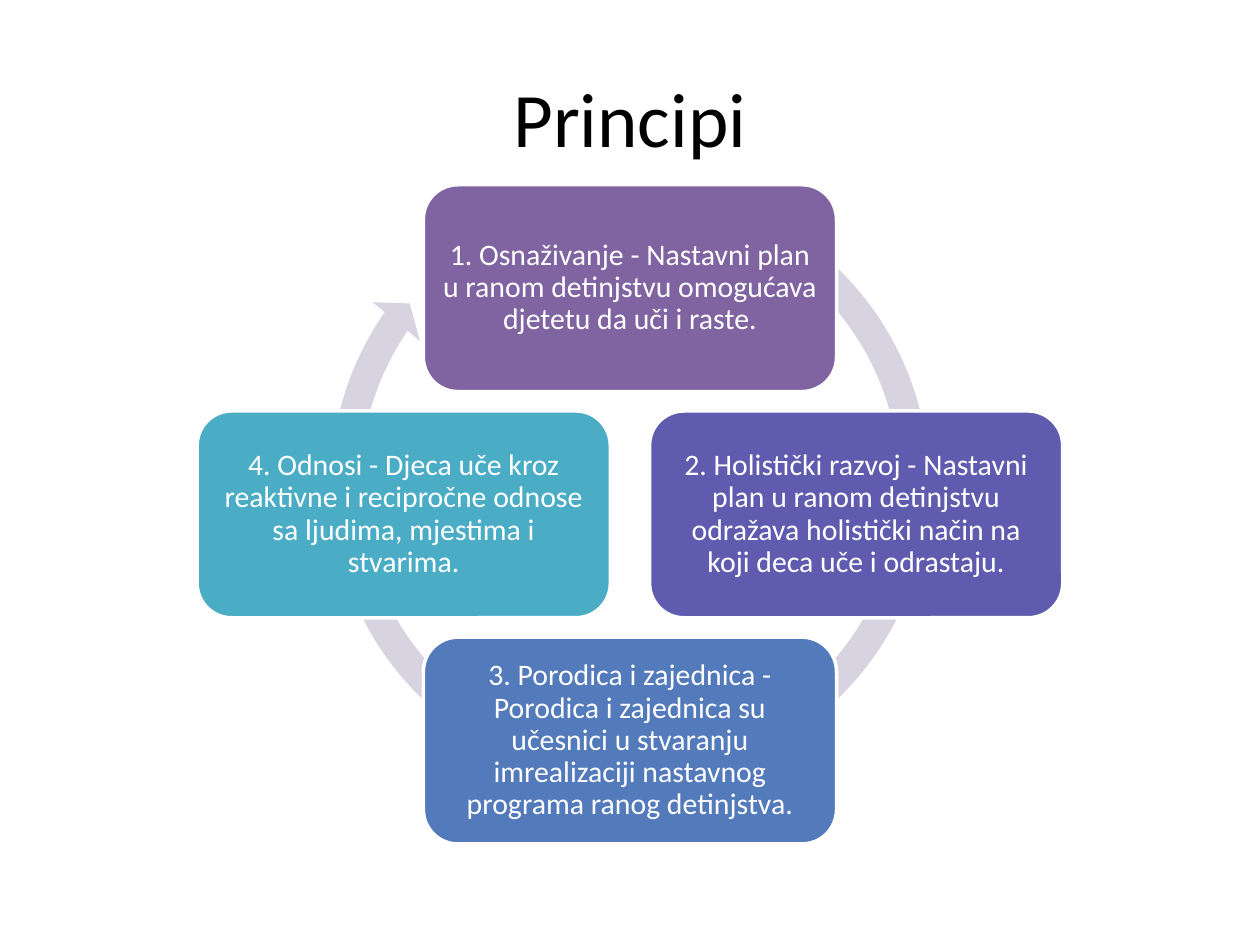
from dataclasses import dataclass

from pptx import Presentation
from pptx import util as u
from pptx.dml.color import RGBColor
from pptx.enum import shapes, text

BLACK = RGBColor(0x00, 0x00, 0x00)
WHITE = RGBColor(0xFF, 0xFF, 0xFF)
LAVENDER = RGBColor(0xD8, 0xD3, 0xE0)
PURPLE = RGBColor(0x80, 0x64, 0xA2)
INDIGO = RGBColor(0x5F, 0x5B, 0xAE)
BLUE = RGBColor(0x53, 0x7A, 0xBA)
TEAL = RGBColor(0x4B, 0xAC, 0xC6)

CENTER_X, CENTER_Y = 12.7, 10.37
STEP = 4.56
CARD_WIDTH, CARD_HEIGHT = 8.33, 4.17
RING_SIZE, RING_TOP = 12.7, 3.4
RING_ADJUSTMENTS = (0.0467, 2.729, 128.844, 179.948, 0.0485)


@dataclass(frozen=True)
class Principle:
    wording: str
    color: RGBColor
    column: int
    row: int


PRINCIPLES = (
    Principle("1. Osnaživanje - Nastavni plan u ranom detinjstvu omogućava "
              "djetetu da uči i raste.", PURPLE, 0, -1),
    Principle("2. Holistički razvoj - Nastavni plan u ranom detinjstvu odražava "
              "holistički način na koji deca uče i odrastaju.", INDIGO, 1, 0),
    Principle("3. Porodica i zajednica - Porodica i zajednica su učesnici u stvaranju "
              "imrealizaciji nastavnog programa ranog detinjstva.", BLUE, 0, 1),
    Principle("4. Odnosi - Djeca uče kroz reaktivne i recipročne odnose sa ljudima, "
              "mjestima i stvarima.", TEAL, -1, 0),
)


def write(holder, wording: str, size: int, color: RGBColor,
          inset: float, spacing: float) -> None:
    frame = holder.text_frame
    frame_format = {"word_wrap": True, "vertical_anchor": text.MSO_ANCHOR.MIDDLE}
    for side in ("left", "top", "right", "bottom"):
        frame_format[f"margin_{side}"] = u.Cm(inset)
    paragraph = frame.paragraphs[0]
    run = paragraph.add_run()
    run.text = wording
    run.font.color.rgb = color
    formats = (
        (frame, frame_format),
        (paragraph, {"alignment": text.PP_ALIGN.CENTER, "line_spacing": spacing}),
        (run.font, {"name": "Calibri", "size": u.Pt(size)}),
    )
    for target, values in formats:
        for attribute, value in values.items():
            setattr(target, attribute, value)


def draw_title(slide) -> None:
    title = slide.shapes.add_textbox(u.Cm(1.27), u.Cm(0.76), u.Cm(22.86), u.Cm(3.18))
    write(title, "Principi", 44, BLACK, 0.25, 1.0)


def draw_ring(slide) -> None:
    ring = slide.shapes.add_shape(
        shapes.MSO_SHAPE.CIRCULAR_ARROW,
        u.Cm(CENTER_X - RING_SIZE / 2), u.Cm(RING_TOP),
        u.Cm(RING_SIZE), u.Cm(RING_SIZE))
    for index, value in enumerate(RING_ADJUSTMENTS):
        ring.adjustments[index] = value
    ring.shadow.inherit = False
    ring.fill.solid()
    ring.fill.fore_color.rgb = LAVENDER
    ring.line.fill.background()


def draw_principle(slide, principle: Principle) -> None:
    card = slide.shapes.add_shape(
        shapes.MSO_SHAPE.ROUNDED_RECTANGLE,
        u.Cm(CENTER_X + principle.column * STEP - CARD_WIDTH / 2),
        u.Cm(CENTER_Y + principle.row * STEP - CARD_HEIGHT / 2),
        u.Cm(CARD_WIDTH), u.Cm(CARD_HEIGHT))
    card.shadow.inherit = False
    card.fill.solid()
    card.fill.fore_color.rgb = principle.color
    card.line.color.rgb = WHITE
    card.line.width = u.Pt(2)
    write(card, principle.wording, 17, WHITE, 0.18, 0.9)


def main() -> None:
    deck = Presentation()
    deck.slide_width, deck.slide_height = u.Cm(25.4), u.Cm(19.05)
    slide = deck.slides.add_slide(deck.slide_layouts[6])
    draw_title(slide)
    draw_ring(slide)
    for principle in PRINCIPLES:
        draw_principle(slide, principle)
    deck.save("out.pptx")


if __name__ == "__main__":
    main()
